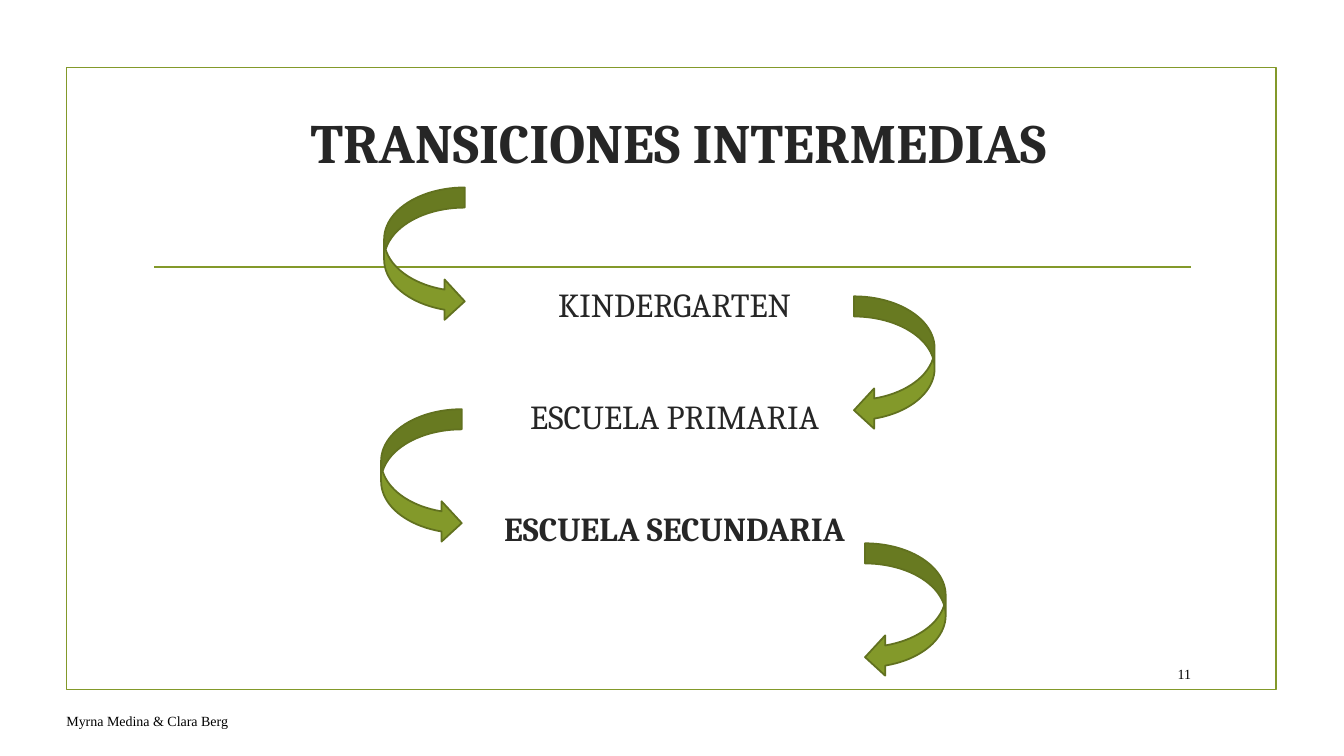
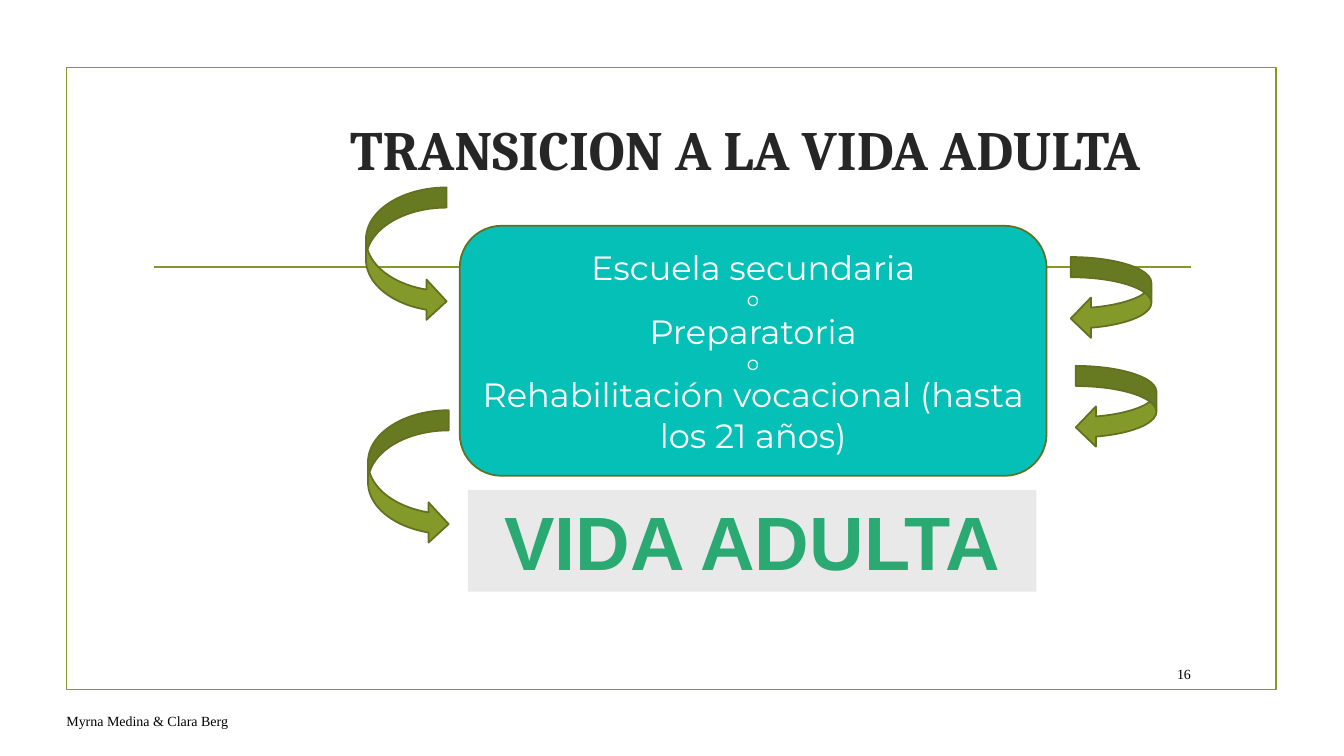
"""Build two slides on school transitions, with a shared frame, title and footer."""
import pptx
import pptx.dml.color
import pptx.enum.shapes
import pptx.enum.text
import pptx.oxml
import pptx.util

Inches = pptx.util.Inches
Pt = pptx.util.Pt
RGBColor = pptx.dml.color.RGBColor
SHAPE = pptx.enum.shapes.MSO_SHAPE
ALIGN = pptx.enum.text.PP_ALIGN
ANCHOR = pptx.enum.text.MSO_ANCHOR

OLIVE = RGBColor(0x83, 0x99, 0x2A)
DARK_OLIVE = RGBColor(0x61, 0x71, 0x1F)
TEAL = RGBColor(0x04, 0xC0, 0xB7)
GREEN = RGBColor(0x2A, 0xA9, 0x73)
GRAY = RGBColor(0xE9, 0xE9, 0xE9)
INK = RGBColor(0x26, 0x26, 0x26)
BLACK = RGBColor(0, 0, 0)
WHITE = RGBColor(0xFF, 0xFF, 0xFF)


def add_box(s, box, kind=None, fill=None, line=None, anchor=ANCHOR.MIDDLE):
    """Add a text box, or a preset shape when kind is given; return its text frame."""
    x, y, w, h = map(Inches, box)
    if kind is None:
        sp = s.shapes.add_textbox(x, y, w, h)
    else:
        sp = s.shapes.add_shape(kind, x, y, w, h)
        sp.shadow.inherit = False
        if fill is None:
            sp.fill.background()
        else:
            sp.fill.solid()
            sp.fill.fore_color.rgb = fill
        if line is None:
            sp.line.fill.background()
        else:
            sp.line.color.rgb = line
            sp.line.width = Pt(1.25)
    tf = sp.text_frame
    tf.word_wrap = True
    tf.vertical_anchor = anchor
    return tf


def add_text(tf, text, size=24, font="Cambria", color=INK, bold=False,
             align=ALIGN.CENTER, before=0):
    """Write one paragraph at the end of a text frame."""
    p = tf.paragraphs[0]
    if p.runs:
        p = tf.add_paragraph()
        p.space_before = Pt(before)
    p.alignment = align
    r = p.add_run()
    r.text = text
    r.font.size = Pt(size)
    r.font.name = font
    r.font.bold = bold
    r.font.color.rgb = color


prs = pptx.Presentation()
prs.slide_width = Inches(13.33)
prs.slide_height = Inches(7.5)

pages = [
    ("TRANSICIONES INTERMEDIAS", 0.98, 1.01, "11"),
    ("TRANSICION A LA VIDA ADULTA", 1.64, 1.08, "16"),
]
slides = []
for title, left, top, number in pages:
    s = prs.slides.add_slide(prs.slide_layouts[6])
    slides.append(s)
    add_box(s, (0.66, 0.67, 12, 6.17), SHAPE.RECTANGLE, line=OLIVE)
    rule = s.shapes.add_connector(
        pptx.enum.shapes.MSO_CONNECTOR.STRAIGHT,
        Inches(1.53), Inches(2.65), Inches(11.81), Inches(2.65))
    rule.line.color.rgb = OLIVE
    rule.line.width = Pt(1.25)
    pptx.oxml.xmlchemy.OxmlElement  # noqa
    rule._element.spPr.append(pptx.oxml.parse_xml(
        '<a:effectLst xmlns:a="http://schemas.openxmlformats.org/drawingml/2006/main"/>'))
    add_text(add_box(s, (left, top, 11.5, 0.79)), title, size=39.6, bold=True)
    for text, box, align in [
        ("Myrna Medina & Clara Berg", (0.56, 7, 7.99, 0.31), ALIGN.LEFT),
        (number, (11.32, 6.53, 0.59, 0.31), ALIGN.RIGHT),
    ]:
        add_text(add_box(s, box), text, size=10, font="Times New Roman",
                 color=BLACK, align=align)

stages, adult = slides

tf = add_box(stages, (0.94, 2.77, 11.5, 4.06), anchor=ANCHOR.TOP)
for text, bold in [("KINDERGARTEN", False), ("ESCUELA PRIMARIA", False),
                   ("ESCUELA SECUNDARIA", True)]:
    add_text(tf, text, bold=bold, before=51)

tf = add_box(adult, (4.64, 4.86, 5.64, 1.01), SHAPE.RECTANGLE, fill=GRAY, anchor=ANCHOR.TOP)
add_text(tf, "VIDA ADULTA", size=54, font="Arial", color=GREEN, bold=True)

tf = add_box(adult, (4.56, 2.24, 5.82, 2.48), SHAPE.ROUNDED_RECTANGLE, TEAL, DARK_OLIVE)
for text, size in [("Escuela secundaria", 24), ("o", 14), ("Preparatoria", 24), ("o", 14),
                   ("Rehabilitación vocacional (hasta los 21 años)", 24)]:
    add_text(tf, text, size=size, font="Montserrat", color=WHITE)

LEFT, RIGHT = SHAPE.CURVED_LEFT_ARROW, SHAPE.CURVED_RIGHT_ARROW
for s, kind, x, y, h in [
    (stages, LEFT, 8.47, 2.94, 1.33),
    (stages, LEFT, 8.58, 5.39, 1.33),
    (stages, RIGHT, 3.78, 4.06, 1.33),
    (stages, RIGHT, 3.81, 1.86, 1.33),
    (adult, LEFT, 10.62, 2.55, 0.81),
    (adult, LEFT, 10.67, 3.63, 0.81),
    (adult, RIGHT, 3.65, 4.07, 1.33),
    (adult, RIGHT, 3.63, 1.86, 1.33),
]:
    add_box(s, (x, y, 0.8, h), kind, OLIVE, DARK_OLIVE)

prs.save("out.pptx")
